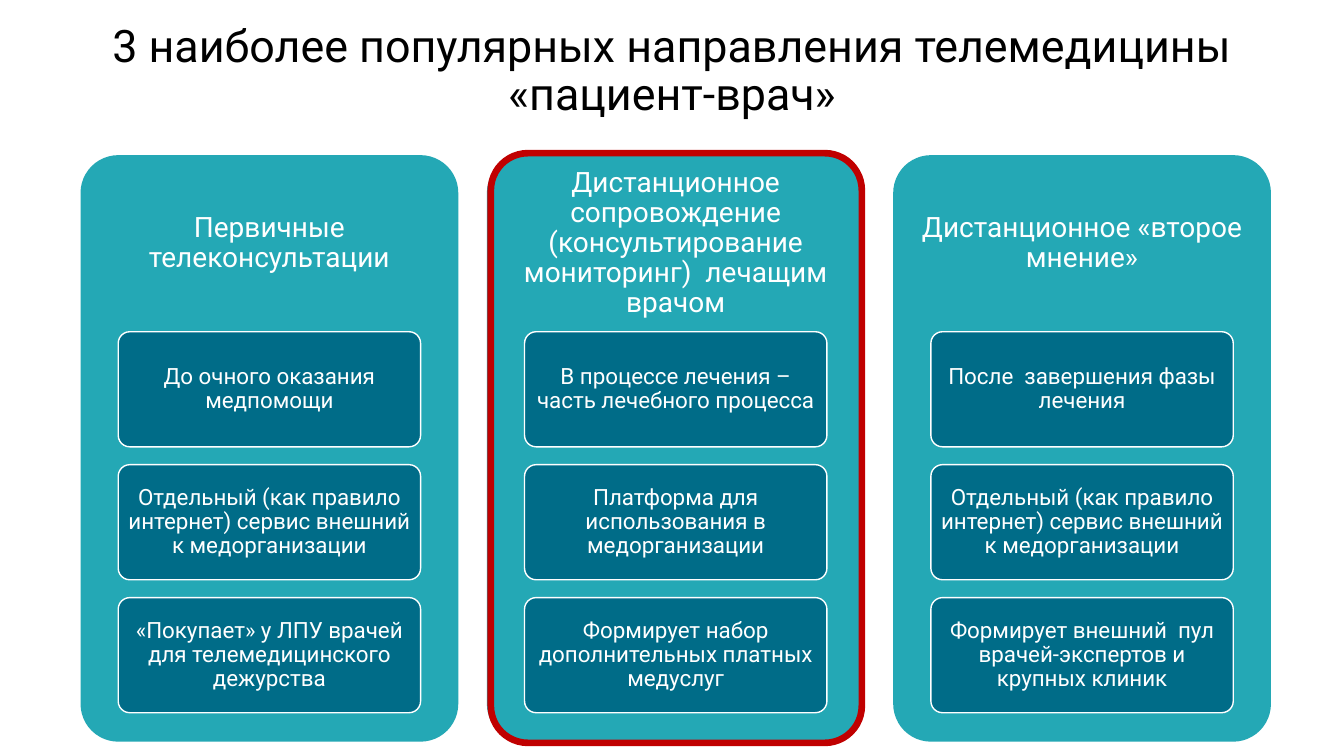
from pptx import Presentation
from pptx.dml.color import RGBColor
from pptx.enum.shapes import MSO_SHAPE as Preset
from pptx.enum.text import MSO_ANCHOR as Anchor, MSO_AUTO_SIZE as AutoSize, PP_ALIGN as Align
from pptx.util import Cm, Pt

TEAL = RGBColor(0x24, 0xA8, 0xB5)
DEEP_BLUE = RGBColor(0x00, 0x6C, 0x88)
RED = RGBColor(0xC0, 0x00, 0x00)
WHITE = RGBColor(0xFF, 0xFF, 0xFF)
BLACK = RGBColor(0x00, 0x00, 0x00)

COLUMNS = [
    ("Первичные телеконсультации", [
        "До очного оказания медпомощи",
        "Отдельный (как правило интернет) сервис внешний к медорганизации",
        "«Покупает» у ЛПУ врачей для телемедицинского дежурства",
    ]),
    ("Дистанционное сопровождение (консультирование мониторинг)  лечащим врачом", [
        "В процессе лечения – часть лечебного процесса",
        "Платформа для использования в медорганизации",
        "Формирует набор дополнительных платных медуслуг",
    ]),
    ("Дистанционное «второе мнение»", [
        "После  завершения фазы лечения",
        "Отдельный (как правило интернет) сервис внешний к медорганизации",
        "Формирует внешний  пул врачей-экспертов и крупных клиник",
    ]),
]
LEFT, TOP, COLUMN_STEP = 2.03, 3.91, 10.24
PANEL_WIDTH, PANEL_HEIGHT, HEADER_HEIGHT = 9.52, 14.78, 4.45
CARD_INDENT, CARD_WIDTH, CARD_HEIGHT, CARD_STEP = 0.95, 7.62, 2.9, 3.35


def add_rounded(left, top, width, height, fill=None, line=None, weight=1):
    box = page.shapes.add_shape(Preset.ROUNDED_RECTANGLE, Cm(left), Cm(top), Cm(width), Cm(height))
    box.adjustments[0] = 0.1
    box.shadow.inherit = False
    if fill is None:
        box.fill.background()
    else:
        box.fill.solid()
        box.fill.fore_color.rgb = fill
    if line is None:
        box.line.fill.background()
    else:
        box.line.color.rgb = line
        box.line.width = Pt(weight)
    return box


def write(box, text, size, color, side, edge):
    frame = box.text_frame
    frame.text = text
    frame.word_wrap = True
    frame.auto_size = AutoSize.NONE
    frame.vertical_anchor = Anchor.MIDDLE
    frame.margin_left = frame.margin_right = Cm(side)
    frame.margin_top = frame.margin_bottom = Cm(edge)
    para = frame.paragraphs[0]
    para.alignment = Align.CENTER
    para.line_spacing = 0.9
    for span in para.runs:
        span.font.name = "Roboto"
        span.font.size = Pt(size)
        span.font.color.rgb = color


deck = Presentation()
deck.slide_width, deck.slide_height = Cm(33.87), Cm(19.05)
page = deck.slides.add_slide(deck.slide_layouts[5])

title = page.shapes.title
title.left, title.top, title.width, title.height = Cm(1.93), Cm(0.23), Cm(30.02), Cm(3.18)
write(title, "3 наиболее популярных направления телемедицины\v«пациент-врач»", 32, BLACK, 0.25, 0.13)

for column, (heading, notes) in enumerate(COLUMNS):
    left = LEFT + column * COLUMN_STEP
    add_rounded(left, TOP, PANEL_WIDTH, PANEL_HEIGHT, TEAL)
    header = page.shapes.add_textbox(Cm(left), Cm(TOP), Cm(PANEL_WIDTH), Cm(HEADER_HEIGHT))
    write(header, heading, 20, WHITE, 0.2, 0.2)
    for row, note in enumerate(notes):
        card_top = TOP + HEADER_HEIGHT + row * CARD_STEP
        card = add_rounded(left + CARD_INDENT, card_top, CARD_WIDTH, CARD_HEIGHT, DEEP_BLUE, WHITE)
        write(card, note, 16, WHITE, 0.1, 0.08)

add_rounded(12.37, 3.86, 9.35, 14.86, line=RED, weight=4.75)

deck.save("out.pptx")
